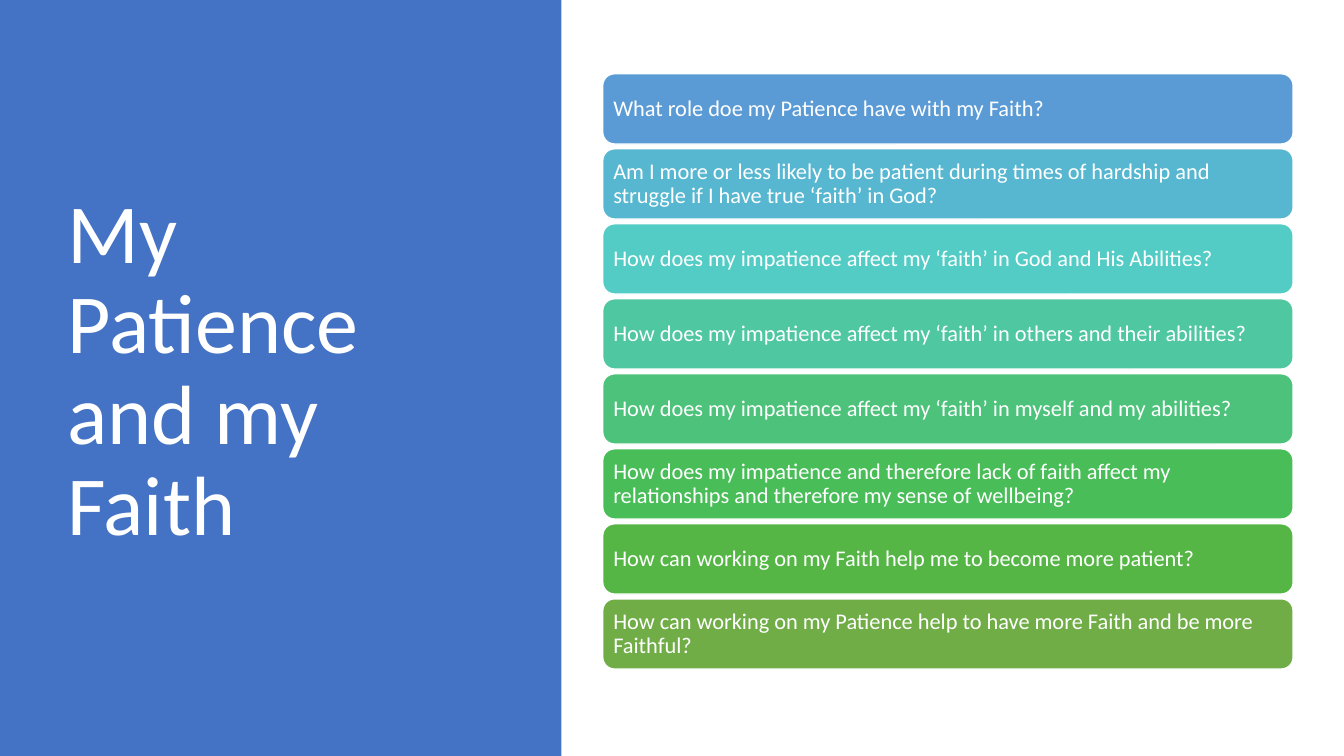
from dataclasses import dataclass

from pptx import Presentation
from pptx import util as u
from pptx.dml.color import RGBColor
from pptx.enum import shapes, text


@dataclass(frozen=True)
class Theme:
    font: str = "Calibri"
    panel: str = "4472C4"
    white: str = "FFFFFF"
    title_size: int = 60
    question_size: int = 16


QUESTIONS = [
    ("What role doe my Patience have with my Faith?", "5B9BD5"),
    ("Am I more or less likely to be patient during times of hardship and "
     "struggle if I have true ‘faith’ in God?", "57B7D1"),
    ("How does my impatience affect my ‘faith’ in God and His Abilities?", "53CCC5"),
    ("How does my impatience affect my ‘faith’ in others and their abilities?", "4FC7A0"),
    ("How does my impatience affect my ‘faith’ in myself and my abilities?", "4CC27B"),
    ("How does my impatience and therefore lack of faith affect my "
     "relationships and therefore my sense of wellbeing?", "48BD58"),
    ("How can working on my Faith help me to become more patient?", "55B646"),
    ("How can working on my Patience help to have more Faith and be more Faithful?",
     "70AD47"),
]


def write(frame, wording, *, font, size, color, inset_x, inset_y):
    frame.word_wrap = True
    frame.vertical_anchor = text.MSO_ANCHOR.MIDDLE
    frame.margin_left = frame.margin_right = u.Cm(inset_x)
    frame.margin_top = frame.margin_bottom = u.Cm(inset_y)
    paragraph = frame.paragraphs[0]
    paragraph.alignment = text.PP_ALIGN.LEFT
    paragraph.line_spacing = 0.9
    run = paragraph.add_run()
    run.text = wording
    run.font.name = font
    run.font.size = u.Pt(size)
    run.font.color.rgb = RGBColor.from_string(color)


class Composer:
    def __init__(self, slide, theme):
        self.slide = slide
        self.theme = theme

    def block(self, kind, left, top, width, height, fill, outline=None):
        block = self.slide.shapes.add_shape(
            kind, u.Cm(left), u.Cm(top), u.Cm(width), u.Cm(height))
        block.shadow.inherit = False
        block.fill.solid()
        block.fill.fore_color.rgb = RGBColor.from_string(fill)
        if outline:
            block.line.color.rgb = RGBColor.from_string(outline)
            block.line.width = u.Pt(1)
        else:
            block.line.fill.background()
        return block

    def panel(self, left, top, width, height):
        self.block(shapes.MSO_SHAPE.RECTANGLE, left, top, width, height,
                   self.theme.panel)

    def title(self, wording, left, top, width, height):
        title = self.slide.shapes.add_textbox(
            u.Cm(left), u.Cm(top), u.Cm(width), u.Cm(height))
        write(title.text_frame, wording, font=self.theme.font,
              size=self.theme.title_size, color=self.theme.white,
              inset_x=0.25, inset_y=0.13)

    def question(self, wording, fill, left, top, width, height):
        question = self.block(shapes.MSO_SHAPE.ROUNDED_RECTANGLE, left, top,
                              width, height, fill, self.theme.white)
        write(question.text_frame, wording, font=self.theme.font,
              size=self.theme.question_size, color=self.theme.white,
              inset_x=0.18, inset_y=0.18)


def main():
    deck = Presentation()
    deck.slide_width, deck.slide_height = u.Cm(33.87), u.Cm(19.05)
    composer = Composer(deck.slides.add_slide(deck.slide_layouts[6]), Theme())

    composer.panel(0, 0, 14.15, 19.05)
    composer.title("My Patience and my Faith", 1.45, 1.73, 10.57, 15.29)

    first_top, pitch = 1.86, 1.89
    for row, (wording, fill) in enumerate(QUESTIONS):
        composer.question(wording, fill, 15.19, first_top + row * pitch, 17.4, 1.77)

    deck.save("out.pptx")


if __name__ == "__main__":
    main()
